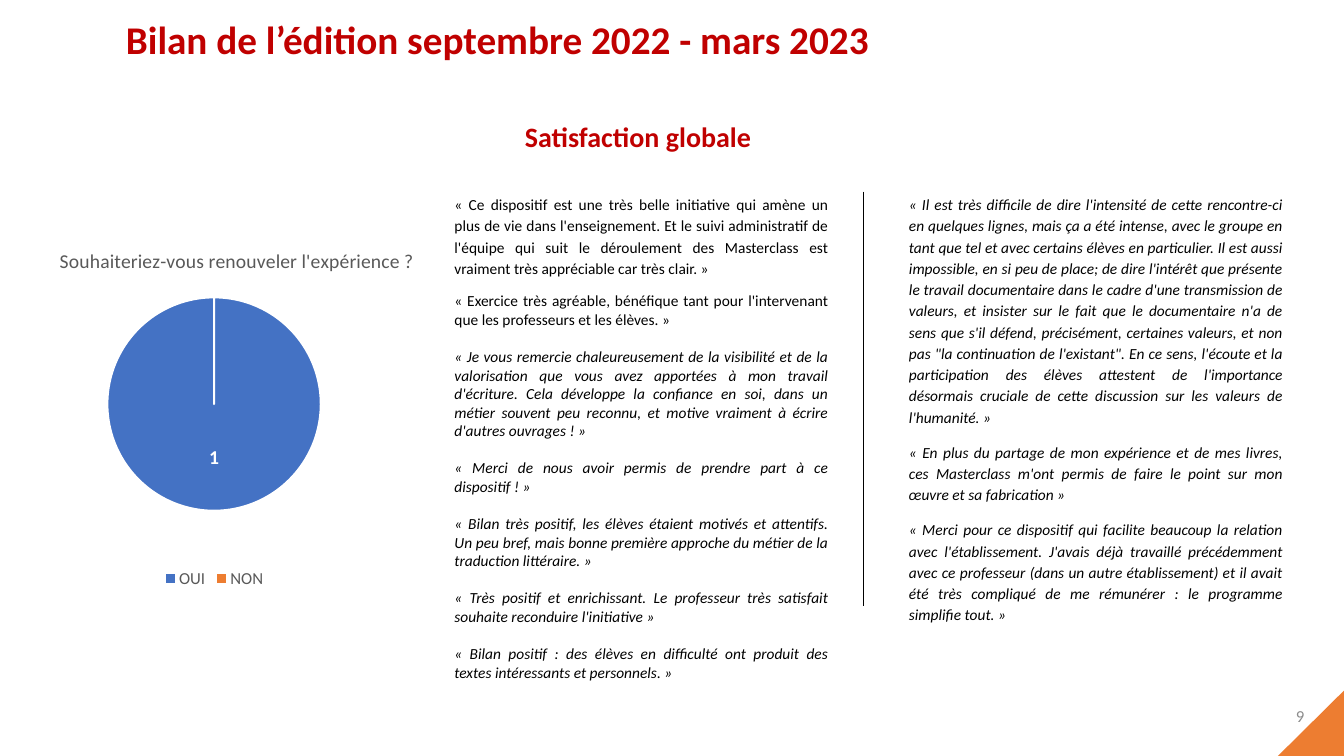
from lxml import etree
from pptx import Presentation
from pptx.chart.data import CategoryChartData
from pptx.dml.color import RGBColor
from pptx.enum.chart import XL_CHART_TYPE, XL_LABEL_POSITION, XL_LEGEND_POSITION
from pptx.enum.shapes import MSO_CONNECTOR, MSO_SHAPE
from pptx.enum.text import MSO_ANCHOR, MSO_AUTO_SIZE, PP_ALIGN
from pptx.oxml.ns import qn
from pptx.util import Pt

RED = RGBColor(0xC0, 0x00, 0x00)
BLACK = RGBColor(0x00, 0x00, 0x00)
WHITE = RGBColor(0xFF, 0xFF, 0xFF)
BLUE = RGBColor(0x44, 0x72, 0xC4)
ORANGE = RGBColor(0xED, 0x7D, 0x31)
DARK_GREY = RGBColor(0x59, 0x59, 0x59)
PAGE_GREY = RGBColor(0x8C, 0x8C, 0x8C)

PIE = XL_CHART_TYPE.PIE
LABEL_CENTER = XL_LABEL_POSITION.CENTER
LEGEND_BOTTOM = XL_LEGEND_POSITION.BOTTOM
STRAIGHT = MSO_CONNECTOR.STRAIGHT
RIGHT_TRIANGLE = MSO_SHAPE.RIGHT_TRIANGLE
TOP, MIDDLE = MSO_ANCHOR.TOP, MSO_ANCHOR.MIDDLE
NO_AUTOFIT = MSO_AUTO_SIZE.NONE
LEFT, RIGHT, JUSTIFY = PP_ALIGN.LEFT, PP_ALIGN.RIGHT, PP_ALIGN.JUSTIFY

FONT = "Calibri"
AIRY, SINGLE = 1.15, 1.0
AIRY_GAP, SINGLE_GAP = 10, 13.4

LEFT_QUOTES = [
    ("« Ce dispositif est une très belle initiative qui amène un plus de vie dans l'enseignement. "
     "Et le suivi administratif de l'équipe qui suit le déroulement des Masterclass est vraiment "
     "très appréciable car très clair. »", AIRY, AIRY_GAP, False),
    ("« Exercice très agréable, bénéfique tant pour l'intervenant que les professeurs et les "
     "élèves. »", SINGLE, SINGLE_GAP, False),
] + [(quote, SINGLE, SINGLE_GAP, True) for quote in (
    "« Je vous remercie chaleureusement de la visibilité et de la valorisation que vous avez "
    "apportées à mon travail d'écriture. Cela développe la confiance en soi, dans un métier "
    "souvent peu reconnu, et motive vraiment à écrire d'autres ouvrages ! »",
    "« Merci de nous avoir permis de prendre part à ce dispositif ! »",
    "« Bilan très positif, les élèves étaient motivés et attentifs. Un peu bref, mais bonne "
    "première approche du métier de la traduction littéraire. »",
    "« Très positif et enrichissant. Le professeur très satisfait souhaite reconduire "
    "l'initiative »",
    "« Bilan positif : des élèves en difficulté ont produit des textes intéressants et "
    "personnels. »",
)]
RIGHT_QUOTES = [(quote, AIRY, AIRY_GAP, True) for quote in (
    "« Il est très difficile de dire l'intensité de cette rencontre-ci en quelques lignes, mais "
    "ça a été intense, avec le groupe en tant que tel et avec certains élèves en particulier. Il "
    "est aussi impossible, en si peu de place; de dire l'intérêt que présente le travail "
    "documentaire dans le cadre d'une transmission de valeurs, et insister sur le fait que le "
    "documentaire n'a de sens que s'il défend, précisément, certaines valeurs, et non pas \"la "
    "continuation de l'existant\". En ce sens, l'écoute et la participation des élèves attestent "
    "de l'importance désormais cruciale de cette discussion sur les valeurs de l'humanité. »",
    "« En plus du partage de mon expérience et de mes livres, ces Masterclass m'ont permis de "
    "faire le point sur mon œuvre et sa fabrication »",
    "« Merci pour ce dispositif qui facilite beaucoup la relation avec l'établissement. J'avais "
    "déjà travaillé précédemment avec ce professeur (dans un autre établissement) et il avait été "
    "très compliqué de me rémunérer : le programme simplifie tout. »",
)]


def set_font(font, size, color, bold=False, italic=False):
    """Apply the slide's font with the given look."""
    font.name = FONT
    font.size = Pt(size)
    font.color.rgb = color
    font.bold = bold
    font.italic = italic


def place(shape, left, top, width, height):
    """Position a shape, in points."""
    shape.left, shape.top = Pt(left), Pt(top)
    shape.width, shape.height = Pt(width), Pt(height)


def write_line(frame, text, size, color, bold=False, align=LEFT, anchor=TOP):
    """Fill a text frame with a single formatted line."""
    frame.word_wrap = True
    frame.auto_size = NO_AUTOFIT
    frame.vertical_anchor = anchor
    frame.text = text
    line = frame.paragraphs[0]
    line.alignment = align
    set_font(line.runs[0].font, size, color, bold)


def add_title(slide, text):
    """Move and format the title placeholder."""
    title = slide.shapes.title
    place(title, 82.8, 7, 700, 42)
    write_line(title.text_frame, text, 28, RED, bold=True)


def add_label(slide, text, box, **look):
    """Add a one-line text box."""
    label = slide.shapes.add_textbox(*map(Pt, box))
    write_line(label.text_frame, text, **look)


def add_quotes(slide, quotes, left, height):
    """Add a justified column of quotes."""
    frame = slide.shapes.add_textbox(Pt(left), Pt(134), Pt(281.5), Pt(height)).text_frame
    frame.word_wrap = True
    frame.text = "\n".join(quote[0] for quote in quotes)
    for paragraph, (_, spacing, gap, italic) in zip(frame.paragraphs, quotes):
        paragraph.alignment = JUSTIFY
        paragraph.line_spacing = spacing
        paragraph.space_after = Pt(gap)
        set_font(paragraph.runs[0].font, 11, BLACK, italic=italic)


def add_divider(slide, x, top, bottom):
    """Add the thin vertical line between the columns."""
    divider = slide.shapes.add_connector(STRAIGHT, Pt(x), Pt(top), Pt(x), Pt(bottom))
    divider.line.color.rgb = BLACK
    divider.line.width = Pt(0.5)
    properties = divider.element.find(qn("p:spPr"))
    etree.SubElement(properties, qn("a:effectLst"))


def add_corner(slide):
    """Add the orange triangle in the bottom right corner."""
    corner = slide.shapes.add_shape(RIGHT_TRIANGLE, Pt(912.3), Pt(493), Pt(47.5), Pt(48))
    corner.rotation = 270
    corner.shadow.inherit = False
    corner.fill.solid()
    corner.fill.fore_color.rgb = ORANGE
    corner.line.fill.background()


def set_layout(parent, successor, **fractions):
    """Fix the place of a chart part, in fractions of the chart."""
    present = parent.find(qn("c:layout"))
    if present is not None:
        parent.remove(present)
    layout = etree.Element(qn("c:layout"))
    manual = etree.SubElement(layout, qn("c:manualLayout"))
    if "w" in fractions:
        etree.SubElement(manual, qn("c:layoutTarget")).set("val", "inner")
    for axis in ("x", "y"):
        etree.SubElement(manual, qn(f"c:{axis}Mode")).set("val", "edge")
    for key, value in fractions.items():
        etree.SubElement(manual, qn(f"c:{key}")).set("val", str(value))
    parent.find(qn(successor)).addprevious(layout)


def add_pie(slide):
    """Add the pie chart of the wish to renew the experience."""
    answers = CategoryChartData()
    answers.categories = ["OUI", "NON"]
    answers.add_series("Series 1", [1, None])
    chart = slide.shapes.add_chart(PIE, Pt(-13), Pt(169.2), Pt(332), Pt(254.2), answers).chart
    set_font(chart.font, 10, BLACK)

    chart.has_title = True
    heading = chart.chart_title.text_frame
    heading.text = "Souhaiteriez-vous renouveler l'expérience ?"
    set_font(heading.paragraphs[0].runs[0].font, 14, DARK_GREY)
    set_layout(chart.chart_title.element, "c:overlay", x=0.16, y=0.02)
    plot_area = chart.element.find(f".//{qn('c:plotArea')}")
    set_layout(plot_area, "c:pieChart", x=0.27, y=0.17, w=0.46, h=0.6)

    chart.has_legend = True
    chart.legend.position = LEGEND_BOTTOM
    chart.legend.include_in_layout = False
    set_font(chart.legend.font, 12, DARK_GREY)

    pie = chart.plots[0]
    pie.vary_by_categories = True
    for index, color in enumerate((BLUE, ORANGE)):
        slice_format = pie.series[0].points[index].format
        slice_format.fill.solid()
        slice_format.fill.fore_color.rgb = color
        slice_format.line.color.rgb = WHITE
        slice_format.line.width = Pt(1.5)
    labels = pie.series[0].data_labels
    labels.show_value = True
    labels.position = LABEL_CENTER
    set_font(labels.font, 14, WHITE, bold=True)


def main():
    """Build the slide and save it."""
    prs = Presentation()
    prs.slide_width, prs.slide_height = Pt(960), Pt(540)
    slide = prs.slides.add_slide(prs.slide_layouts[5])
    add_corner(slide)
    add_label(slide, "9", (744.5, 497, 194.4, 28.8), size=12, color=PAGE_GREY,
              align=RIGHT, anchor=MIDDLE)
    add_label(slide, "Satisfaction globale", (367.8, 81.7, 200, 34), size=20, color=RED, bold=True)
    add_pie(slide)
    add_quotes(slide, RIGHT_QUOTES, 642.2, 367)
    add_divider(slide, 617, 136.8, 432.7)
    add_quotes(slide, LEFT_QUOTES, 317.5, 358.5)
    add_title(slide, "Bilan de l’édition septembre 2022 - mars 2023")
    prs.save("out.pptx")


if __name__ == "__main__":
    main()
